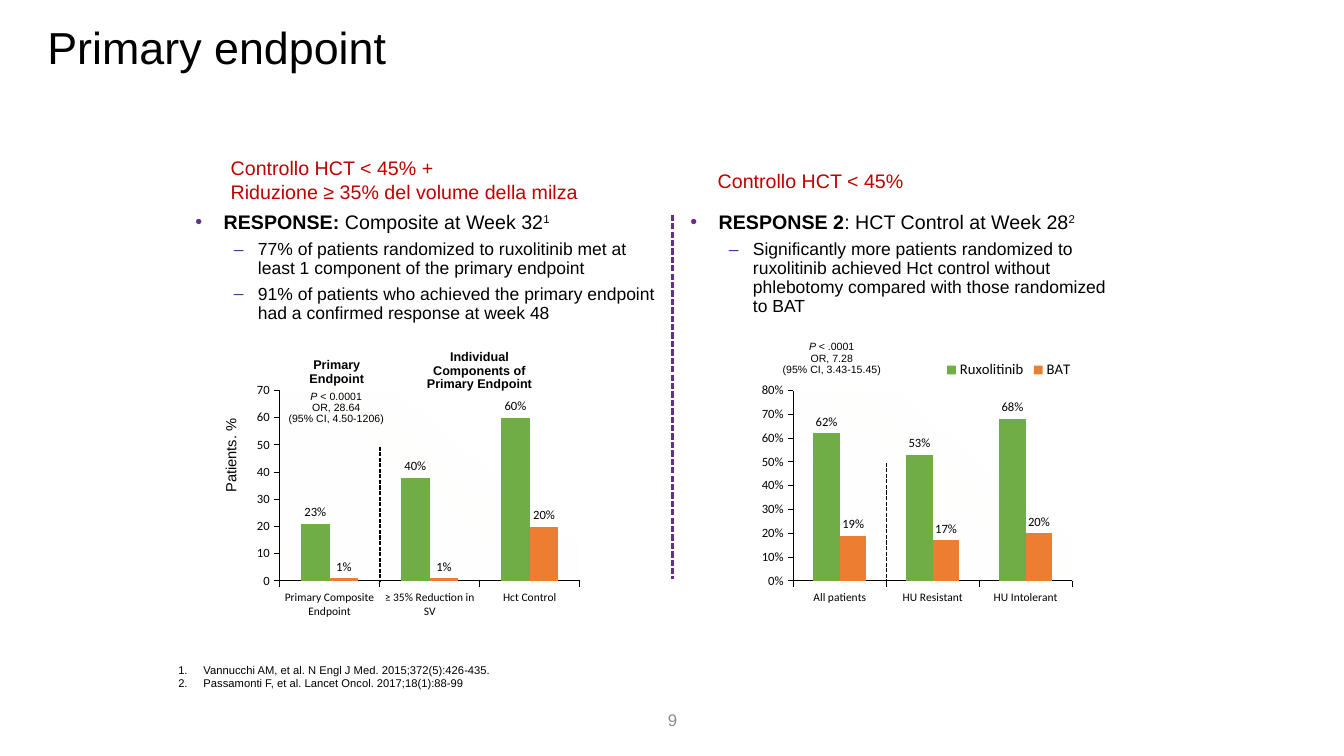
from dataclasses import dataclass
from lxml import etree
from pptx import Presentation
from pptx.chart.data import CategoryChartData as Data
from pptx.dml.color import RGBColor as RGB
from pptx.enum.chart import XL_CHART_TYPE as Kind, XL_LABEL_POSITION as Spot
from pptx.enum.chart import XL_LEGEND_POSITION as Side, XL_TICK_MARK as Tick
from pptx.enum.dml import MSO_LINE as Dash
from pptx.enum.shapes import MSO_CONNECTOR as Link
from pptx.enum.text import MSO_ANCHOR as Anchor, PP_ALIGN as Align
from pptx.oxml import parse_xml
from pptx.oxml.ns import nsdecls, qn
from pptx.util import Inches, Pt


@dataclass(frozen=True)
class Theme:
    ink: RGB = RGB(0, 0, 0)
    red: RGB = RGB(0xC0, 0, 0)
    plum: RGB = RGB(0x65, 0x2E, 0x88)
    grey: RGB = RGB(0x8C, 0x8C, 0x8C)
    green: RGB = RGB(0x70, 0xAD, 0x47)
    gold: RGB = RGB(0xED, 0x7D, 0x31)
    sans: str = "Arial"
    plot: str = "Calibri"
    title: float = 32
    head: float = 14
    body: float = 12.5
    page: float = 12
    key: float = 10.5
    label: float = 9
    cat: float = 8.2
    ref: float = 8
    note: float = 7.5


look = Theme()
deck = Presentation()
deck.slide_width, deck.slide_height = Inches(13.33), Inches(7.5)
cell = deck.slide_height / 75  # the grid has 75 rows of square cells
slide = deck.slides.add_slide(deck.slide_layouts[5])
shapes = slide.shapes


def grid(*cells):
    return [round(c * cell) for c in cells]


def fill(frame, paras, size, ink=look.ink, side=Align.LEFT, lead=1.0):
    """Write paragraphs; each is a list of (text, style) with style b, i or s."""
    frame.word_wrap = True
    for n, runs in enumerate(paras):
        para = frame.paragraphs[0] if n == 0 else frame.add_paragraph()
        para.alignment, para.line_spacing = side, lead
        para.font.name, para.font.size = look.sans, Pt(size)
        para.font.color.rgb = ink
        styles = {style for _, style in runs}
        if styles == {"b"}:
            para.font.bold = True
        for words, style in runs:
            for k, part in enumerate(words.split("\n")):
                if k:
                    para.add_line_break()
                run = para.add_run()
                run.text = part
                if len(styles) > 1:
                    run.font.bold = style == "b"
                    run.font.italic = style == "i"
                if style == "s":
                    run.font._element.set("baseline", "30000")


# Title
title = shapes.title
title.left, title.top, title.width, title.height = grid(3.7, -0.4, 95.8, 10.8)
title.text_frame.vertical_anchor = Anchor.MIDDLE
fill(title.text_frame, [[("Primary endpoint", "")]], look.title, lead=0.9)

# Charts: place, categories, series, top of scale, step, format, point labels
charts = [
    ((21.7, 35.1, 37.7, 27),
     ["Primary Composite Endpoint", "≥ 35% Reduction in SV", "Hct Control"],
     [("Series 1", [21, 38, 60]), ("Series 2", [1, 1, 20])],
     70, 10, "#,##0", [["23%", "40%", "60%"], ["1%", "1%", "20%"]]),
    ((73.1, 35.1, 35, 27),
     ["All patients", "HU Resistant", "HU Intolerant"],
     [("Ruxolitinib", [0.62, 0.53, 0.68]), ("BAT", [0.19, 0.17, 0.2])],
     0.8, 0.1, "0%", None),
]
frame_xml = ('<c:layout %s><c:manualLayout>%s<c:xMode val="edge"/><c:yMode val="edge"/>'
             '<c:x val="%s"/><c:y val="%s"/><c:w val="%s"/><c:h val="%s"/>'
             '</c:manualLayout></c:layout>')
glow = ('<c:spPr %s><a:gradFill><a:gsLst><a:gs pos="0"><a:srgbClr val="FFFFFF"/></a:gs>'
        '<a:gs pos="65000"><a:srgbClr val="FCFEFA"><a:alpha val="0"/></a:srgbClr></a:gs>'
        '</a:gsLst><a:lin ang="18600000" scaled="0"/></a:gradFill></c:spPr>')
for place, cats, series, top, step, form, tags in charts:
    data = Data()
    data.categories = cats
    for name, vals in series:
        data.add_series(name, vals)
    chart = shapes.add_chart(Kind.COLUMN_CLUSTERED, *grid(*place), data).chart
    chart.has_title = False
    chart.font.name, chart.font.size = look.plot, Pt(look.label)
    chart.font.color.rgb = look.ink
    for axis in (chart.category_axis, chart.value_axis):
        axis.has_major_gridlines = False
        axis.major_tick_mark, axis.minor_tick_mark = Tick.OUTSIDE, Tick.NONE
        axis.format.line.color.rgb, axis.format.line.width = look.ink, Pt(0.75)
    chart.category_axis.tick_labels.font.size = Pt(look.cat)
    scale = chart.value_axis
    scale.minimum_scale, scale.maximum_scale, scale.major_unit = 0, top, step
    scale.tick_labels.number_format = form
    scale.tick_labels.number_format_is_linked = False
    plot = chart.plots[0]
    plot.gap_width, plot.overlap, plot.vary_by_categories = 150, 0, False
    for n, bars in enumerate(plot.series):
        bars.format.fill.solid()
        bars.format.fill.fore_color.rgb = (look.green, look.gold)[n]
        marks = bars.data_labels
        marks.show_value, marks.position = True, Spot.OUTSIDE_END
        marks.number_format, marks.number_format_is_linked = form, False
        for k, tag in enumerate(tags[n] if tags else []):
            mark = bars.points[k].data_label
            mark.text_frame.text, mark.position = tag, Spot.OUTSIDE_END
    # Fixed plot area with a faint gradient
    area = chart._chartSpace.chart.plotArea
    for old in area.findall(qn("c:layout")):
        area.remove(old)
    inner = '<c:layoutTarget val="inner"/>'
    area.insert(0, parse_xml(frame_xml % (nsdecls("c"), inner, 0.16, 0.135, 0.79, 0.7)))
    area.append(parse_xml(glow % nsdecls("c", "a")))
    chart.has_legend = tags is None
    if chart.has_legend:
        key = chart.legend
        key.position, key.include_in_layout = Side.TOP, False
        key.font.size, key.font.color.rgb = Pt(look.key), look.ink
        for old in key._element.findall(qn("c:layout")):
            key._element.remove(old)
        box = parse_xml(frame_xml % (nsdecls("c"), "", 0.58, 0.01, 0.38, 0.1))
        key._element.find(qn("c:legendPos")).addnext(box)

# Bulleted lists and references: place, paragraphs, sizes, marks
lists = [
    ((18.4, 20.6, 47.5, 37.1), [
        [("RESPONSE: ", "b"), ("Composite at Week 32", ""), ("1", "s")],
        [("77% of patients randomized to ruxolitinib met at least 1 component "
          "of the primary endpoint", "")],
        [("91% of patients who achieved the primary endpoint had a confirmed "
          "response at week 48", "")]], True),
    ((67.5, 20.6, 46.7, 37.1), [
        [("RESPONSE 2", "b"), (": HCT Control at Week 28", ""), ("2", "s")],
        [("Significantly more patients randomized to ruxolitinib achieved Hct control "
          "without phlebotomy compared with those randomized\nto BAT", "")]], True),
    ((16.7, 65.3, 100, 3.7), [
        [("Vannucchi AM, et al. N Engl J Med. 2015;372(5):426-435.", "")],
        [("Passamonti F, et al. Lancet Oncol. 2017;18(1):88-99", "")]], False),
]
for place, paras, dots in lists:
    frame = shapes.add_textbox(*grid(*place)).text_frame
    fill(frame, paras, look.body if dots else look.ref, lead=0.9 if dots else 1.0)
    for n, para in enumerate(frame.paragraphs):
        left, hang = ((2.8, 2.8), (6.2, 2.4))[n > 0] if dots else (2.5, 2.5)
        props = para._p.get_or_add_pPr()
        props.set("marL", str(grid(left)[0]))
        props.set("indent", str(-grid(hang)[0]))
        spot = props.find(qn("a:defRPr"))
        if dots:
            para.level = min(n, 1)
            para.space_before = Pt(5 if n else 0)
            para.font.size = Pt(look.body if n else look.head)
            tint = etree.Element(qn("a:buClr"))
            etree.SubElement(tint, qn("a:srgbClr")).set("val", str(look.plum))
            face = etree.Element(qn("a:buFont"), typeface=look.sans)
            sign = etree.Element(qn("a:buChar"), char="–" if n else "•")
            marks = [tint, face, sign]
        else:
            marks = [etree.Element(qn("a:buAutoNum"), type="arabicPeriod")]
        for mark in marks:
            spot.addprevious(mark)

# Plain labels: place, paragraphs, size, colour, side, line spacing, turn
mid, left = Align.CENTER, Align.LEFT
labels = [
    ((27.5, 38.3, 11.7, 4.4), [[("P", "i"), (" < 0.0001", "")],
     [("OR, 28.64\n(95% CI, 4.50-1206)", "")]], look.note, look.ink, mid, 0.9, 0),
    ((76, 33.4, 13, 4.4), [[("P ", "i"), ("< .0001", "")],
     [("OR, 7.28\n(95% CI, 3.43-15.45)", "")]], look.note, look.ink, mid, 0.9, 0),
    ((28.9, 35.1, 9, 3.7), [[("Primary Endpoint", "b")]],
     look.label, look.ink, mid, 0.9, 0),
    ((40.9, 34.3, 13.3, 5.1), [[("Individual Components of Primary Endpoint", "b")]],
     look.label, look.ink, mid, 0.9, 0),
    ((13.7, 43.9, 18.6, 2.6), [[("Patients. %", "")]],
     look.key, look.ink, mid, 0.9, 270),
    ((21.9, 15, 37.7, 5.7), [[("Controllo HCT < 45% +", "")],
     [("Riduzione ≥ 35% del volume della milza", "")]], look.head, look.red, left, 1.0, 0),
    ((70.2, 16.3, 25.6, 3.4), [[("Controllo HCT < 45%", "")]],
     look.head, look.red, left, 1.0, 0),
    ((44.2, 69.9, 45, 3.2), [[("9", "")]], look.page, look.grey, mid, 1.0, 0),
]
for place, paras, size, ink, side, lead, turn in labels:
    box = shapes.add_textbox(*grid(*place))
    box.rotation = turn
    fill(box.text_frame, paras, size, ink, side, lead)

# Dashed dividers: column, top row, bottom row, colour, weight
for x, top, end, ink, width in [(66.7, 21.3, 57.4, look.plum, 1.5),
                                (37.7, 44.3, 57.7, look.ink, 1),
                                (87.9, 45.9, 57.7, look.ink, 1)]:
    rule = shapes.add_connector(Link.STRAIGHT, *grid(x, top, x, end))
    rule.line.color.rgb, rule.line.width = ink, Pt(width)
    rule.line.dash_style = Dash.SQUARE_DOT
    etree.SubElement(rule._element.spPr, qn("a:effectLst"))

deck.save("out.pptx")
